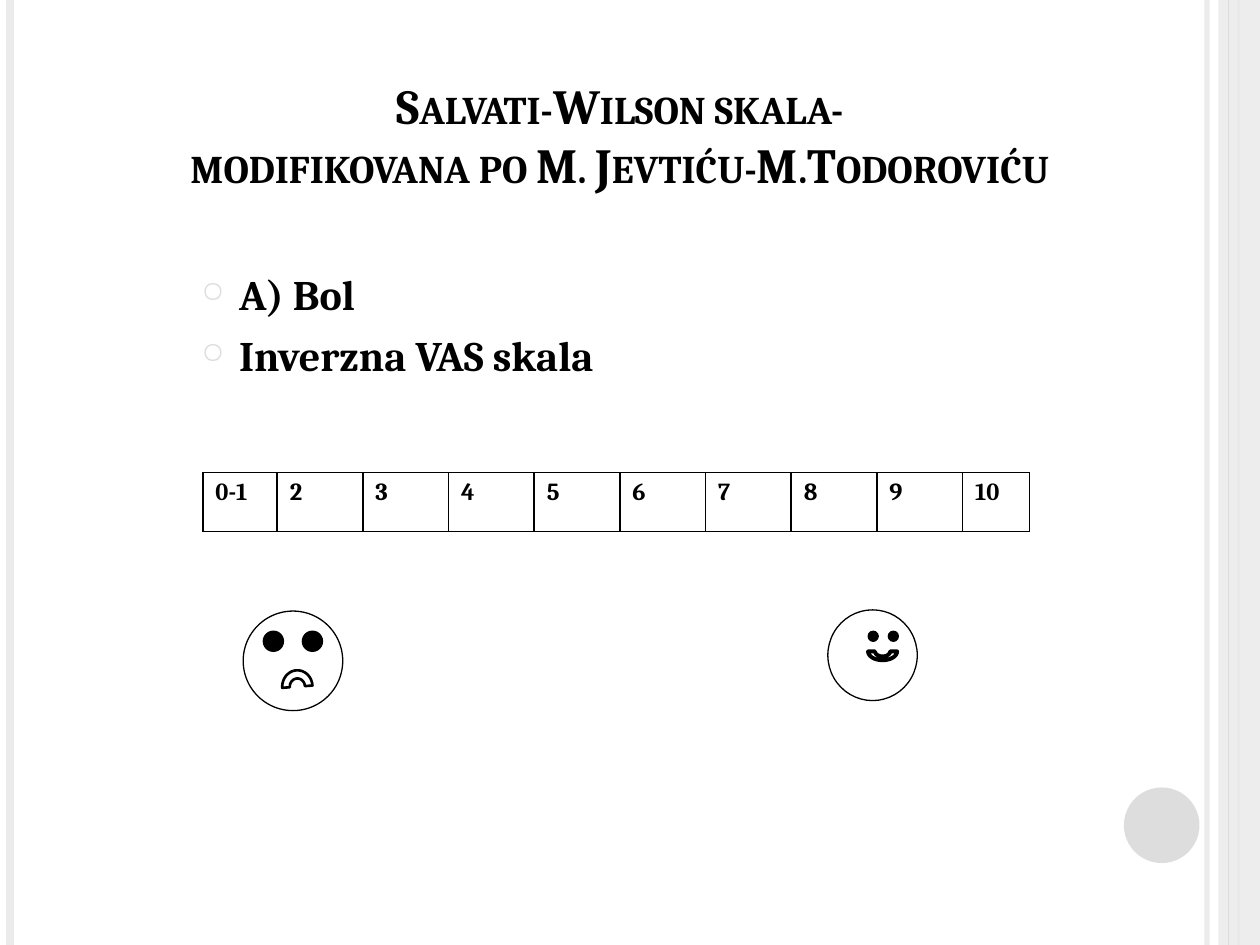
import math

from lxml import etree
from pptx import Presentation, util as u
from pptx.dml.color import RGBColor
from pptx.enum import shapes, text
from pptx.oxml import ns

THEME = {
    "font": "Cambria",
    "ink": RGBColor.from_string("000000"),
    "paper": RGBColor.from_string("FFFFFF"),
    "band": RGBColor.from_string("EBEBEB"),
    "accent": RGBColor.from_string("DDDDDD"),
    "title": 28, "body": 24, "scale": 14,
}
COLUMNS, ROWS = 100, 75

deck = Presentation()
deck.slide_width, deck.slide_height = u.Inches(10), u.Inches(7.5)
UNIT = deck.slide_width / COLUMNS
slide = deck.slides.add_slide(deck.slide_layouts[6])
canvas = slide.shapes


def grid(*cells):
    """Turn grid columns or rows into lengths."""
    return [u.Emu(round(cell * UNIT)) for cell in cells]


def style(run, size):
    run.font.name = THEME["font"]
    run.font.size = u.Pt(size)
    run.font.bold = True
    run.font.color.rgb = THEME["ink"]


# Side rails: column, colour, width, opacity; the band lies under the last one
for column, color, width, opacity in [
    (95.8, "band", 3, 93), (0.8, "band", 4.5, 100),
    (98.3, "accent", 1.5, 100), (97.5, "accent", 0.75, 100),
]:
    if column == 97.5:
        band = canvas.add_shape(shapes.MSO_SHAPE.RECTANGLE, *grid(96.7, 0, 3.3, ROWS))
        band.shadow.inherit = False
        band.fill.solid()
        band.fill.fore_color.rgb = THEME["band"]
        band.line.fill.background()
        tint = band.fill._xPr.find(".//" + ns.qn("a:srgbClr"))
        etree.SubElement(tint, ns.qn("a:alpha"), val="87000")
    rail = canvas.add_connector(shapes.MSO_CONNECTOR.STRAIGHT, *grid(column, 0, column, ROWS))
    rail.line.color.rgb = THEME[color]
    rail.line.width = u.Pt(width)
    if opacity < 100:
        tint = rail.line._ln.find(".//" + ns.qn("a:srgbClr"))
        etree.SubElement(tint, ns.qn("a:alpha"), val=str(opacity * 1000))
    etree.SubElement(rail._element.spPr, ns.qn("a:effectLst"))

# Title
title = canvas.add_textbox(*grid(6.7, 3.3, 85, 12.5)).text_frame
title.word_wrap = True
title.vertical_anchor = text.MSO_ANCHOR.BOTTOM
heading = title.paragraphs[0]
heading.text = "Salvati-Wilson skala-\vmodifikovana po M. Jevtiću-M.Todoroviću"
heading.alignment = text.PP_ALIGN.CENTER
for run in heading.runs:
    style(run, THEME["title"])
    run.font._element.set("cap", "small")

# Pain scale
scores = ["0-1", "2", "3", "4", "5", "6", "7", "8", "9", "10"]
widths = [5.9] + [6.8] * 8 + [5.3]
scale = canvas.add_table(1, len(scores), *grid(16.1, 37.5, sum(widths), 4.7)).table
scale.first_row = scale.horz_banding = False
for index, (score, width) in enumerate(zip(scores, widths)):
    scale.columns[index].width = grid(width)[0]
    cell = scale.cell(0, index)
    cell.text = score
    style(cell.text_frame.paragraphs[0].runs[0], THEME["scale"])
    cell_format = cell._tc.get_or_add_tcPr()
    for side in ("lnL", "lnR", "lnT", "lnB"):
        border = etree.SubElement(cell_format, ns.qn("a:" + side), w=str(u.Pt(1)))
        paint = etree.SubElement(border, ns.qn("a:solidFill"))
        etree.SubElement(paint, ns.qn("a:srgbClr"), val=str(THEME["ink"]))
    cell.fill.background()

# Criterion
criterion = canvas.add_textbox(*grid(15, 20.8, 85, 45)).text_frame
criterion.word_wrap = True
criterion.text = "A) Bol\nInverzna VAS skala"
indent = grid(3)[0]
for item in criterion.paragraphs:
    item.space_before = u.Pt(6)
    style(item.runs[0], THEME["body"])
    layout = item._p.get_or_add_pPr()
    layout.set("marL", str(indent))
    layout.set("indent", str(-indent))
    bullet_color = etree.SubElement(layout, ns.qn("a:buClr"))
    etree.SubElement(bullet_color, ns.qn("a:srgbClr"), val=str(THEME["accent"]))
    etree.SubElement(layout, ns.qn("a:buSzPct"), val="70000")
    etree.SubElement(layout, ns.qn("a:buChar"), char="○")

# Heads, eyes and page-number disc: left, top, width, height, fill, outline
for *box, fill, outline in [
    (89.2, 62.5, 6, 6, "accent", None),
    (19.3, 48.5, 7.9, 7.9, "paper", "ink"),
    (20.9, 50.1, 1.6, 1.6, "ink", "ink"),
    (24, 50.1, 1.6, 1.6, "ink", "ink"),
    (65.7, 48.4, 7.1, 7.2, "paper", "ink"),
    (68.9, 50.1, 0.8, 0.8, "ink", "ink"),
    (70.5, 50.1, 0.8, 0.8, "ink", "ink"),
]:
    disc = canvas.add_shape(shapes.MSO_SHAPE.OVAL, *grid(*box))
    disc.shadow.inherit = False
    disc.fill.solid()
    disc.fill.fore_color.rgb = THEME[fill]
    if outline:
        disc.line.color.rgb = THEME[outline]
        disc.line.width = u.Pt(0.75)
    else:
        disc.line.fill.background()

# Mouths: centre, outer radii, inner radii, start angle, line width
for x, y, outer, inner, start, width in [
    (23.6, 54.5, (1.2, 1.3), (0.6, 0.65), 176, 1.5),
    (70.05, 51.7, (1.15, 0.7), (0.6, 0.4), 0, 2.25),
]:
    sweep = [math.radians(start + step) for step in range(0, 181, 6)]
    rim = [
        grid(x + rx * math.cos(angle), y + ry * math.sin(angle))
        for (rx, ry), angles in ((outer, sweep), (inner, sweep[::-1]))
        for angle in angles
    ]
    outline = canvas.build_freeform(*rim[0])
    outline.add_line_segments(rim[1:], close=True)
    mouth = outline.convert_to_shape()
    mouth.shadow.inherit = False
    mouth.fill.solid()
    mouth.fill.fore_color.rgb = THEME["paper"]
    mouth.line.color.rgb = THEME["ink"]
    mouth.line.width = u.Pt(width)

deck.save("out.pptx")
